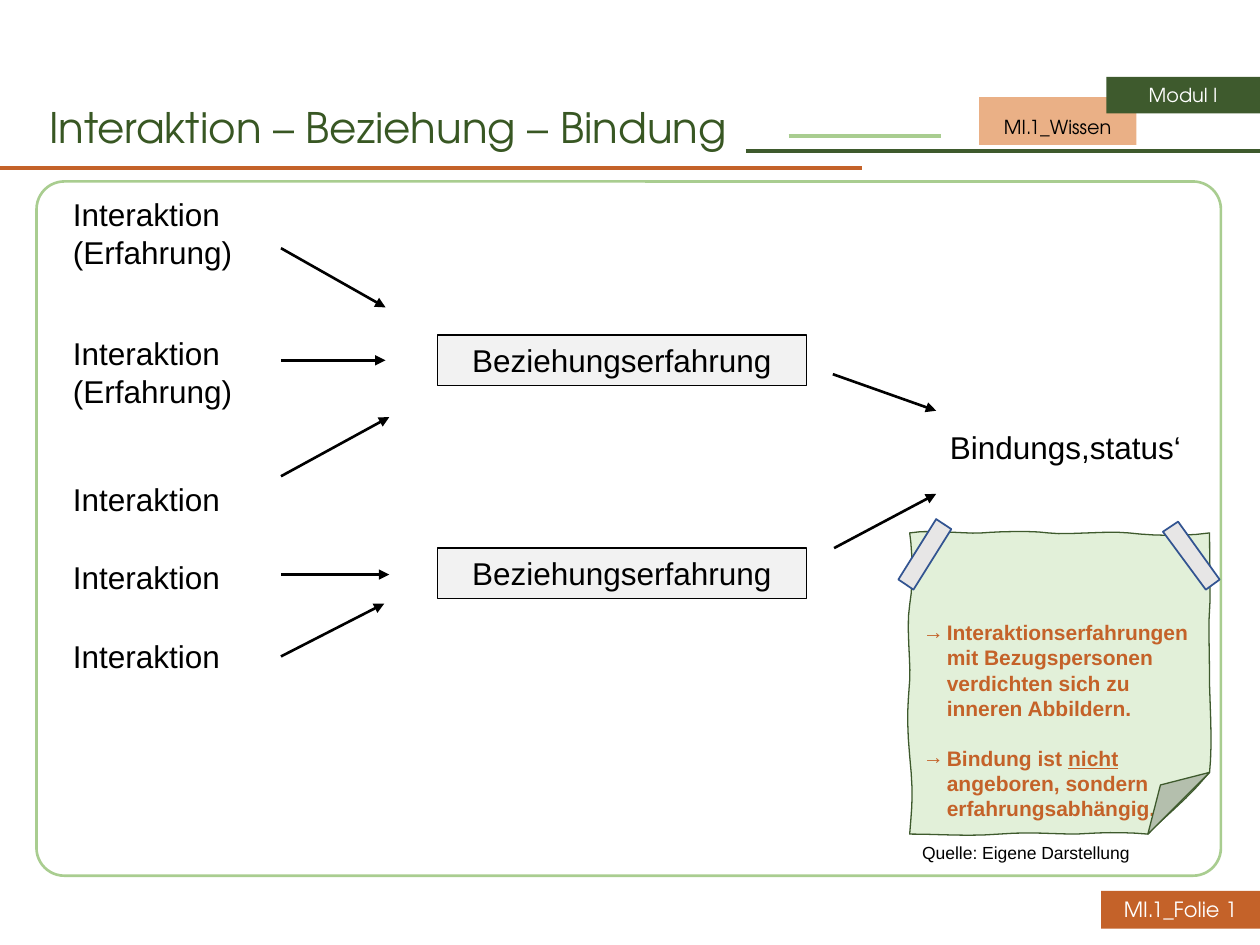
from dataclasses import dataclass

from lxml.etree import SubElement
from pptx import Presentation
from pptx.dml.color import RGBColor
from pptx.enum.shapes import MSO_CONNECTOR, MSO_SHAPE
from pptx.enum.text import MSO_ANCHOR, PP_ALIGN
from pptx.oxml.ns import qn
from pptx.util import Pt

PX = 9144


@dataclass(frozen=True)
class Theme:
    body_font: str = "Arial"
    heading_font: str = "TeX Gyre Adventor"
    black: str = "000000"
    white: str = "FFFFFF"
    title_green: str = "385723"
    dark_green: str = "3E5A2D"
    light_green: str = "A9CD90"
    note_green: str = "E2F0D9"
    fold_green: str = "B4BFAD"
    orange: str = "C46229"
    peach: str = "EAB086"
    box_grey: str = "F2F2F2"
    tape_grey: str = "E7E6E6"
    tape_blue: str = "325491"
    title_size: int = 24
    body_size: int = 18
    note_size: int = 12
    tag_size: int = 11
    source_size: int = 10


def smooth_points(start, curves, steps=6):
    points = [start]
    for first, second, end in curves:
        origin = points[-1]
        for step in range(1, steps + 1):
            t = step / steps
            u = 1 - t
            points.append(tuple(
                u**3 * a + 3 * u * u * t * b + 3 * u * t * t * c + t**3 * d
                for a, b, c, d in zip(origin, first, second, end)))
    return points


class SlideBuilder:
    def __init__(self, slide, theme):
        self.slide = slide
        self.theme = theme

    def font(self, paragraph, size, color=None, name=None, bold=False):
        font = paragraph.font
        font.name = name or self.theme.body_font
        font.size = Pt(size)
        font.bold = bold
        font.color.rgb = RGBColor.from_string(color or self.theme.black)

    def paint(self, shape, fill=None, line=None, weight=1):
        shape.shadow.inherit = False
        if fill:
            shape.fill.solid()
            shape.fill.fore_color.rgb = RGBColor.from_string(fill)
        else:
            shape.fill.background()
        if line:
            shape.line.color.rgb = RGBColor.from_string(line)
            shape.line.width = Pt(weight)
        else:
            shape.line.fill.background()

    def title(self, text, left, top, width, height):
        shape = self.slide.shapes.title
        shape.left, shape.top = left * PX, top * PX
        shape.width, shape.height = width * PX, height * PX
        frame = shape.text_frame
        frame.text = text
        frame.vertical_anchor = MSO_ANCHOR.TOP
        paragraph = frame.paragraphs[0]
        paragraph.alignment = PP_ALIGN.LEFT
        paragraph.line_spacing = 0.9
        self.font(paragraph, self.theme.title_size, self.theme.title_green, self.theme.heading_font)

    def box(self, left, top, width, height, fill=None, line=None, weight=1,
            kind=MSO_SHAPE.RECTANGLE):
        shape = self.slide.shapes.add_shape(kind, left * PX, top * PX, width * PX, height * PX)
        self.paint(shape, fill, line, weight)
        return shape

    def label(self, shape, text, size, color=None, name=None, align=PP_ALIGN.CENTER, spacing=None):
        frame = shape.text_frame
        frame.word_wrap = True
        frame.vertical_anchor = MSO_ANCHOR.TOP
        frame.text = text
        paragraph = frame.paragraphs[0]
        paragraph.alignment = align
        paragraph.line_spacing = spacing
        self.font(paragraph, size, color, name)

    def text(self, lines, left, top, width, height):
        shape = self.slide.shapes.add_textbox(left * PX, top * PX, width * PX, height * PX)
        frame = shape.text_frame
        frame.word_wrap = False
        frame.text = "\n".join(lines)
        for paragraph in frame.paragraphs:
            self.font(paragraph, self.theme.body_size)

    def line(self, start, end, color, weight, arrow=False):
        connector = self.slide.shapes.add_connector(
            MSO_CONNECTOR.STRAIGHT, *(value * PX for value in start + end))
        connector.line.color.rgb = RGBColor.from_string(color)
        connector.line.width = Pt(weight)
        if arrow:
            SubElement(connector.line._get_or_add_ln(), qn("a:tailEnd"), type="triangle")
        SubElement(connector._element.spPr, qn("a:effectLst"))

    def outline(self, points, fill, line, weight):
        corners = [(round(x * PX), round(y * PX)) for x, y in points]
        builder = self.slide.shapes.build_freeform(*corners[0])
        builder.add_line_segments(corners[1:], close=True)
        shape = builder.convert_to_shape()
        self.paint(shape, fill, line, weight)
        return shape

    def bullets(self, shape, items, top_inset, gap):
        frame = shape.text_frame
        frame.word_wrap = True
        frame.vertical_anchor = MSO_ANCHOR.TOP
        frame.margin_left, frame.margin_top = 12 * PX, top_inset * PX
        for index, runs in enumerate(items):
            paragraph = frame.add_paragraph() if index else frame.paragraphs[0]
            paragraph.alignment = PP_ALIGN.LEFT
            if index:
                paragraph.space_before = Pt(gap)
            properties = paragraph._p.get_or_add_pPr()
            properties.set("marL", str(19 * PX))
            properties.set("indent", str(-19 * PX))
            SubElement(properties, qn("a:buFont"), typeface=self.theme.body_font)
            SubElement(properties, qn("a:buChar"), char="→")
            self.font(paragraph, self.theme.note_size, self.theme.orange, bold=True)
            for text, underlined in runs:
                run = paragraph.add_run()
                run.text = text
                if underlined:
                    run.font.underline = True


def main():
    theme = Theme()
    presentation = Presentation()
    presentation.slide_width, presentation.slide_height = 1000 * PX, 750 * PX
    slide = presentation.slides.add_slide(presentation.slide_layouts[5])
    builder = SlideBuilder(slide, theme)

    topic_tag = builder.box(777, 77, 125, 38, theme.peach)
    builder.label(topic_tag, "MI.1_Wissen", theme.tag_size, name=theme.heading_font, spacing=1.5)
    for start, end, color in [
        ((-3, 133), (684, 133), theme.orange),
        ((592, 120), (1000, 120), theme.dark_green),
        ((626, 108), (747, 108), theme.light_green),
    ]:
        builder.line(start, end, color, 2.25)
    content_frame = builder.box(29, 144, 940, 551, line=theme.light_green, weight=2,
                                kind=MSO_SHAPE.ROUNDED_RECTANGLE)
    content_frame.line.width = Pt(1.5)
    content_frame.adjustments[0] = 0.04
    page_tag = builder.box(874, 707, 126, 30, theme.orange)
    builder.label(page_tag, "MI.1_Folie 1", theme.note_size, theme.white, theme.heading_font)
    module_tag = builder.box(878, 61, 122, 29, theme.dark_green)
    builder.label(module_tag, "Modul I", theme.tag_size, theme.white, theme.heading_font)
    builder.title("Interaktion – Beziehung – Bindung", 29, 80, 862, 145)

    source = builder.box(722, 663, 191, 27, theme.white, theme.white)
    builder.label(source, "Quelle: Eigene Darstellung", theme.source_size, align=PP_ALIGN.LEFT)

    note_curves = [
        ((737, 420), (768, 424), (779, 423)), ((791, 422), (819, 421), (832, 423)),
        ((845, 425), (880, 421), (896, 423)), ((912, 425), (940, 426), (960, 423)),
        ((960, 449), (961, 472), (960, 484)), ((959, 497), (960, 515), (960, 544)),
        ((961, 573), (962, 595), (960, 613)), ((940, 637), (923, 649), (911, 662)),
        ((890, 660), (871, 661), (854, 662)), ((836, 662), (818, 660), (793, 662)),
        ((768, 664), (745, 662), (722, 662)), ((724, 637), (725, 630), (722, 600)),
        ((719, 569), (721, 555), (722, 540)), ((723, 525), (719, 497), (722, 480)),
        ((725, 464), (724, 435), (722, 423)),
    ]
    note = builder.outline(smooth_points((722, 423), note_curves),
                           theme.note_green, theme.dark_green, 0.75)
    builder.bullets(note, [
        [("Interaktionserfahrungen mit Bezugspersonen verdichten sich zu inneren Abbildern.", False)],
        [("Bindung ist ", False), ("nicht", True),
         (" angeboren, sondern erfahrungsabhängig.", False)],
    ], top_inset=70, gap=14)
    builder.outline([(911, 662), (921, 623), (960, 613)], theme.fold_green, theme.dark_green, 0.75)
    for tape in [
        [(743, 412), (755, 420), (725, 468), (713, 460)],
        [(923, 422), (935, 414), (968, 460), (957, 468)],
    ]:
        builder.outline(tape, theme.tape_grey, theme.tape_blue, 1)

    for top in (266, 435):
        experience = builder.box(347, top, 293, 40, theme.box_grey, theme.black, 0.75)
        builder.label(experience, "Beziehungserfahrung", theme.body_size)
    for top in (150, 260):
        builder.text(["Interaktion", "(Erfahrung)"], 48, top, 148, 71)
    for top in (376, 438, 501):
        builder.text(["Interaktion"], 48, top, 138, 40)
    builder.text(["Bindungs,status‘"], 744, 335, 205, 40)

    for start, end in [
        ((223, 197), (306, 244)), ((223, 286), (306, 286)), ((223, 378), (309, 331)),
        ((223, 456), (309, 456)), ((223, 521), (305, 479)),
        ((661, 297), (743, 326)), ((662, 435), (743, 392)),
    ]:
        builder.line(start, end, theme.black, 1.5, arrow=True)

    presentation.save("out.pptx")


if __name__ == "__main__":
    main()
